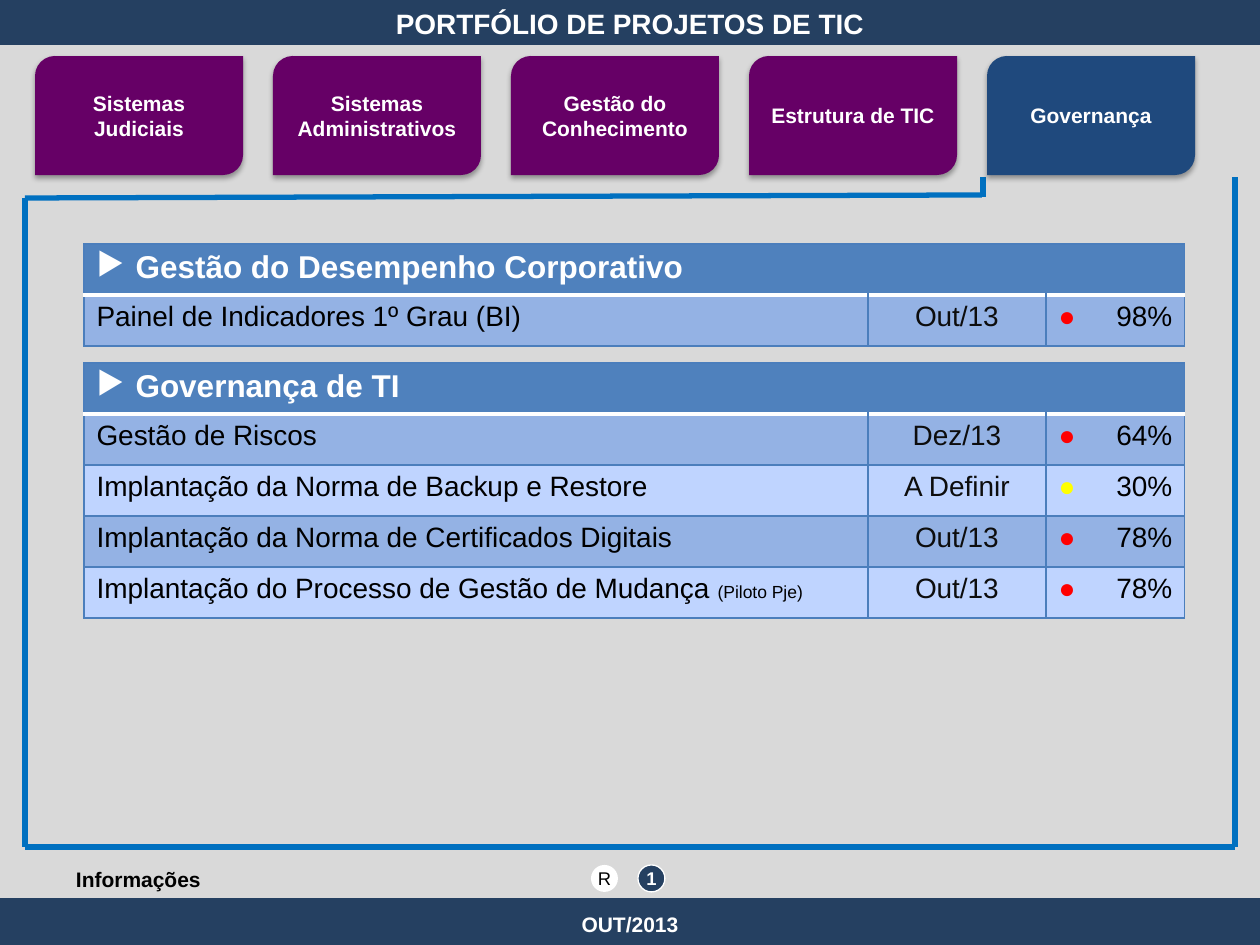
from dataclasses import dataclass

from lxml import etree
from pptx import Presentation
from pptx import util as u
from pptx.dml.color import RGBColor
from pptx.enum import shapes, text
from pptx.oxml import ns

ALIGN = text.PP_ALIGN
SHAPE = shapes.MSO_SHAPE
PX = 914400 / 126


def px(*lengths):
    return [u.Emu(round(length * PX)) for length in lengths]


def add_xml(parent, tag, **attributes):
    return etree.SubElement(parent, ns.qn(tag), attributes)


@dataclass(frozen=True)
class Theme:
    font: str = "Arial"
    white: str = "FFFFFF"
    black: str = "000000"
    ink: str = "0D0D0D"
    panel: str = "D9D9D9"
    navy: str = "254061"
    purple: str = "660066"
    active: str = "1F497D"
    frame: str = "0070C0"
    header: str = "4F81BD"
    band: str = "94B2E4"
    plain: str = "BFD4FF"
    border: str = "4B7EBC"
    red: str = "FF0000"
    yellow: str = "FFFF00"
    heading: int = 18
    large: int = 16
    label: int = 12
    badge: float = 10.5
    note: int = 10


class Slide:
    def __init__(self, deck, theme):
        self.theme = theme
        self.page = deck.slides.add_slide(deck.slide_layouts[5])

    def style(self, para, size, color, bold=False, align=ALIGN.LEFT):
        para.alignment = align
        for span in para.runs:
            span.font.name = self.theme.font
            span.font.size = u.Pt(size)
            span.font.bold = bold
            span.font.color.rgb = RGBColor.from_string(color)

    def fill_text(self, box, words, *style, inset=(12, 6)):
        frame = box.text_frame
        frame.text = words
        frame.word_wrap = True
        frame.vertical_anchor = text.MSO_ANCHOR.MIDDLE
        frame.margin_left = frame.margin_right = px(inset[0])[0]
        frame.margin_top = frame.margin_bottom = px(inset[1])[0]
        self.style(frame.paragraphs[0], *style)

    def title(self, words, *place):
        box = self.page.shapes.title
        box.left, box.top, box.width, box.height = px(*place)
        self.fill_text(box, words, self.theme.large, self.theme.white, True, ALIGN.CENTER)
        # The title sits above the header bar
        self.page.shapes[-1].element.addnext(box.element)

    def shape(self, kind, fill, *place, line=None):
        box = self.page.shapes.add_shape(kind, *px(*place))
        box.shadow.inherit = False
        box.fill.solid()
        box.fill.fore_color.rgb = RGBColor.from_string(fill)
        if line:
            box.line.color.rgb = RGBColor.from_string(line)
            box.line.width = u.Pt(0.75)
        else:
            box.line.fill.background()
        return box

    def label(self, words, place, *style):
        box = self.page.shapes.add_textbox(*px(*place))
        self.fill_text(box, words, *style)

    def tab(self, words, fill, *place):
        box = self.shape(SHAPE.ROUND_2_DIAG_RECTANGLE, fill, *place)
        self.fill_text(box, words, self.theme.label, self.theme.white, True, ALIGN.CENTER)
        effects = box.element.spPr.find(ns.qn("a:effectLst"))
        shadow = add_xml(effects, "a:outerShdw", blurRad="40000", dist="23000",
                         dir="5400000", rotWithShape="0")
        color = add_xml(shadow, "a:srgbClr", val=self.theme.black)
        add_xml(color, "a:alpha", val="35000")

    def badge(self, words, left, fill, color, bold, line=None):
        box = self.shape(SHAPE.OVAL, fill, left, 865, 27, 27, line=line)
        self.fill_text(box, words, self.theme.badge, color, bold, ALIGN.CENTER, inset=(0, 0))

    def line(self, start, end):
        rule = self.page.shapes.add_connector(
            shapes.MSO_CONNECTOR.STRAIGHT, *px(*start, *end))
        rule.line.color.rgb = RGBColor.from_string(self.theme.frame)
        rule.line.width = u.Pt(3)
        add_xml(rule.element.spPr, "a:effectLst")

    def cell(self, cell, fill, borders):
        cell.fill.solid()
        cell.fill.fore_color.rgb = RGBColor.from_string(fill)
        props = cell._tc.get_or_add_tcPr()
        for index, (side, border) in enumerate(zip("LRTB", borders)):
            color, points = border or (None, 0)
            edge = etree.Element(ns.qn(f"a:ln{side}"), w=str(int(u.Pt(points))))
            if color:
                add_xml(add_xml(edge, "a:solidFill"), "a:srgbClr", val=color)
            else:
                add_xml(edge, "a:noFill")
            props.insert(index, edge)

    def projects(self, heading, rows, top):
        look = self.theme
        widths, height = (784, 178, 39, 100), 51
        count = len(rows) + 1
        table = self.page.shapes.add_table(
            count, len(widths), *px(84, top, sum(widths), height * count)).table
        table.first_row = table.horz_banding = False
        for column, width in zip(table.columns, px(*widths)):
            column.width = width
        for row in table.rows:
            row.height = px(height)[0]
        thin, thick = (look.border, 0.75), (look.white, 2)

        # Heading row
        for index in range(len(widths)):
            self.cell(table.cell(0, index), look.header,
                      (thin if index == 0 else None,
                       thin if index == 3 else None, thin, thick))
        para = table.cell(0, 0).text_frame.paragraphs[0]
        para.text = heading
        props = para._p.get_or_add_pPr()
        indent = int(px(39)[0])
        props.set("marL", str(indent))
        props.set("indent", str(-indent))
        add_xml(props, "a:buChar", char="▶")
        self.style(para, look.heading, look.white, True)

        # Project rows: name, deadline, status light, progress
        for number, (name, note, deadline, light, progress) in enumerate(rows, 1):
            values = ((name, look.black, ALIGN.LEFT), (deadline, look.ink, ALIGN.CENTER),
                      ("●", light, ALIGN.RIGHT), (progress, look.black, ALIGN.RIGHT))
            for index, (words, color, align) in enumerate(values):
                cell = table.cell(number, index)
                self.cell(cell, look.band if number % 2 else look.plain,
                          (None if index == 3 else thin, None if index == 2 else thin,
                           thick if number == 1 else thin, thin))
                para = cell.text_frame.paragraphs[0]
                para.text = words
                if index == 0 and note:
                    para.add_run().text = note
                self.style(para, look.large, color, align=align)
                if index == 0 and note:
                    para.runs[1].font.size = u.Pt(look.note)


def main():
    deck = Presentation()
    deck.slide_width, deck.slide_height = px(1260, 945)
    look = Theme()
    slide = Slide(deck, look)

    # Panel, header and footer
    slide.shape(SHAPE.RECTANGLE, look.panel, 0, 45, 1260, 863)
    slide.shape(SHAPE.RECTANGLE, look.navy, 0, 898, 1260, 47)
    slide.shape(SHAPE.RECTANGLE, look.navy, 0, 0, 1260, 45)
    slide.title("PORTFÓLIO DE PROJETOS DE TIC", 0, 0, 1260, 47)
    slide.label("OUT/2013", (0, 903, 1260, 42), look.label, look.white, True, ALIGN.CENTER)

    # Frame open below the active tab
    corners = [(982, 195), (25, 198), (25, 847), (1235, 847), (1235, 177)]
    for start, end in zip(corners, corners[1:]):
        slide.line(start, end)
    slide.line((983, 197), (983, 177))

    # Section tabs
    tabs = ("Sistemas Judiciais", "Sistemas Administrativos", "Gestão do Conhecimento",
            "Estrutura de TIC", "Governança")
    for index, name in enumerate(tabs):
        fill = look.active if name == "Governança" else look.purple
        slide.tab(name, fill, 35 + 238 * index, 56, 208, 119)

    # Project tables
    slide.projects("Gestão do Desempenho Corporativo", [
        ("Painel de Indicadores 1º Grau (BI)", "", "Out/13", look.red, "98%"),
    ], 244)
    slide.projects("Governança de TI", [
        ("Gestão de Riscos", "", "Dez/13", look.red, "64%"),
        ("Implantação da Norma de Backup e Restore", "", "A Definir", look.yellow, "30%"),
        ("Implantação da Norma de Certificados Digitais", "", "Out/13", look.red, "78%"),
        ("Implantação do Processo de Gestão de Mudança ", "(Piloto Pje)", "Out/13",
         look.red, "78%"),
    ], 363)

    # Information line
    slide.label("Informações", (64, 860, 159, 38), look.label, look.black, True)
    slide.badge("R", 591, look.white, look.black, False)
    slide.badge("1", 638, look.navy, look.white, True, line=look.white)

    deck.save("out.pptx")


if __name__ == "__main__":
    main()
